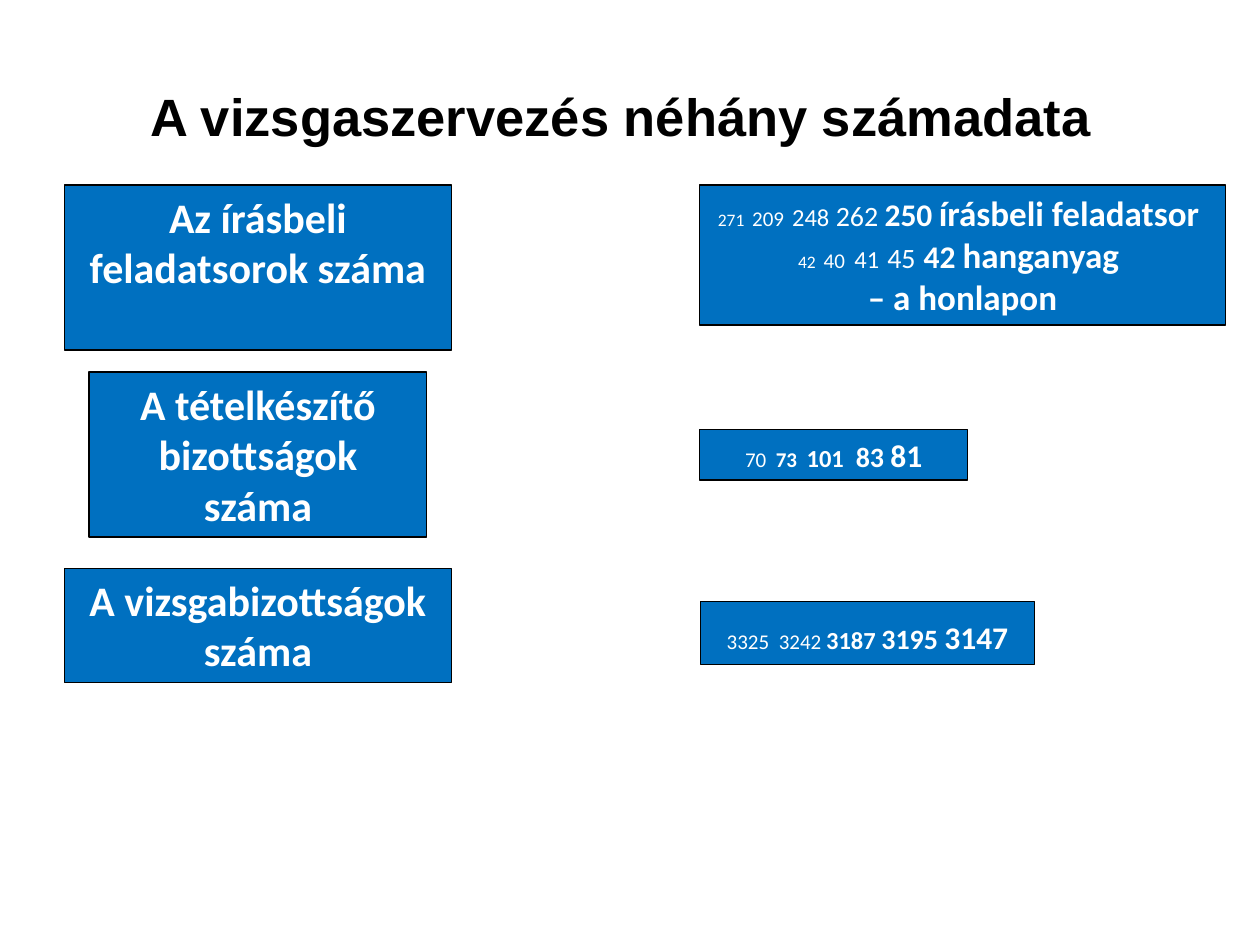
from dataclasses import dataclass

import pptx
import pptx.dml.color
import pptx.enum.shapes
import pptx.enum.text
import pptx.util

Pt = pptx.util.Pt
BLACK = pptx.dml.color.RGBColor(0x00, 0x00, 0x00)
WHITE = pptx.dml.color.RGBColor(0xFF, 0xFF, 0xFF)
BLUE = pptx.dml.color.RGBColor(0x00, 0x70, 0xC0)

LABEL_CENTER = 147.4
FIGURES_LEFT = 399.8
TOP_ROW = 105.8


@dataclass(frozen=True)
class Piece:
    text: str
    size: float
    bold: bool = False


@dataclass(frozen=True)
class Box:
    left: float
    top: float
    width: float
    height: float
    lines: tuple[tuple[Piece, ...], ...]


def label(top: float, width: float, height: float, text: str) -> Box:
    """Describe a left-hand box, centred on the label column."""
    return Box(LABEL_CENTER - width / 2, top, width, height,
               ((Piece(text, 24, True),),))


BOXES = (
    label(TOP_ROW, 221, 94.3, "Az írásbeli feladatsorok száma"),
    label(212.6, 193, 94.3, "A tételkészítő bizottságok száma"),
    Box(FIGURES_LEFT, 245.5, 153.2, 28.8, ((
        Piece("70", 12), Piece("  73  ", 12, True), Piece("101 ", 14, True),
        Piece(" 83 ", 16, True), Piece("81", 18, True)),)),
    Box(FIGURES_LEFT, TOP_ROW, 300.5, 80, (
        (Piece("271  ", 10), Piece("209", 12), Piece(" ", 20),
         Piece("248", 14), Piece(" 262 ", 16), Piece("250", 18, True),
         Piece(" ", 16, True), Piece("írásbeli feladatsor ", 20, True)),
        (Piece("42  ", 10), Piece("40  ", 12), Piece("41", 14),
         Piece(" ", 20), Piece("45", 16), Piece(" ", 20),
         Piece("42 ", 18, True), Piece("hanganyag ", 20, True)),
        (Piece("– a honlapon", 20, True),))),
    label(324.7, 221, 65.5, "A vizsgabizottságok száma"),
    Box(FIGURES_LEFT + 0.5, 343.6, 190.8, 36, ((
        Piece("3325", 12), Piece(" ", 24, True), Piece("3242 ", 12),
        Piece("3187 ", 14, True), Piece("3195 ", 16, True),
        Piece("3147", 18, True)),)),
)


def add_piece(paragraph, piece: Piece, font_name: str, color) -> None:
    run = paragraph.add_run()
    run.text = piece.text
    run.font.name = font_name
    run.font.size = Pt(piece.size)
    run.font.bold = piece.bold
    run.font.color.rgb = color


def add_title(slide) -> None:
    title = slide.shapes.title
    title.left, title.top = Pt(21.6), Pt(31.7)
    title.width, title.height = Pt(674.6), Pt(73.4)
    title.text_frame.vertical_anchor = pptx.enum.text.MSO_ANCHOR.MIDDLE
    heading = title.text_frame.paragraphs[0]
    heading.alignment = pptx.enum.text.PP_ALIGN.CENTER
    heading.line_spacing = 0.9
    add_piece(heading, Piece("A vizsgaszervezés néhány számadata ", 30, True),
              "Arial", BLACK)


def add_box(slide, box: Box) -> None:
    shape = slide.shapes.add_shape(
        pptx.enum.shapes.MSO_SHAPE.RECTANGLE,
        Pt(box.left), Pt(box.top), Pt(box.width), Pt(box.height))
    shape.shadow.inherit = False
    shape.fill.solid()
    shape.fill.fore_color.rgb = BLUE
    shape.line.color.rgb = BLACK
    shape.line.width = Pt(0.75)
    frame = shape.text_frame
    frame.word_wrap = True
    frame.vertical_anchor = pptx.enum.text.MSO_ANCHOR.TOP
    paragraph = frame.paragraphs[0]
    paragraph.alignment = pptx.enum.text.PP_ALIGN.CENTER
    for number, line in enumerate(box.lines):
        if number:
            paragraph.add_line_break()
        for piece in line:
            add_piece(paragraph, piece, "Calibri", WHITE)


def main() -> None:
    deck = pptx.Presentation()
    deck.slide_width, deck.slide_height = Pt(720), Pt(540)
    slide = deck.slides.add_slide(deck.slide_layouts.get_by_name("Title Only"))
    add_title(slide)
    for box in BOXES:
        add_box(slide, box)
    deck.save("out.pptx")


if __name__ == "__main__":
    main()
